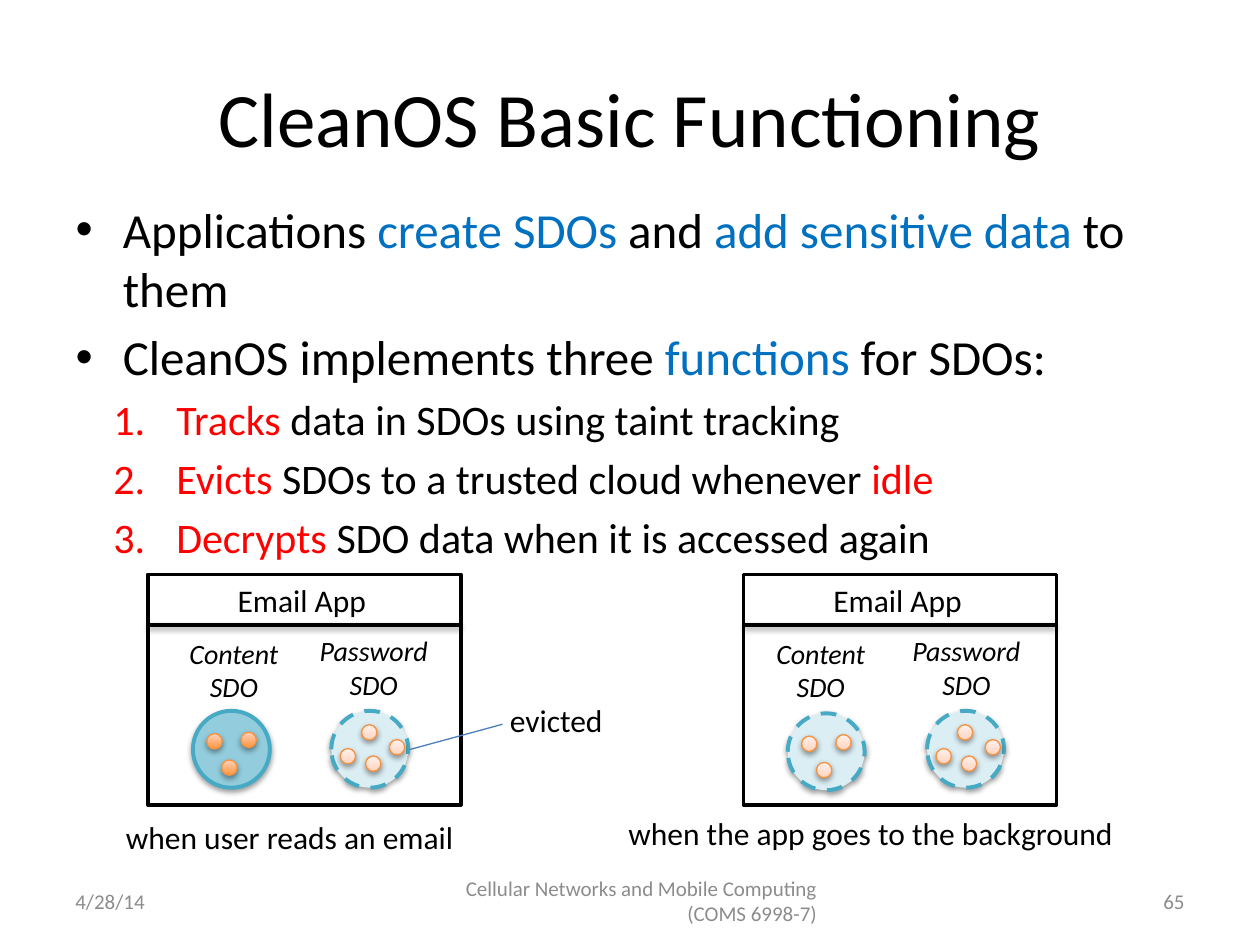
from dataclasses import dataclass

import pptx
import pptx.dml.color
import pptx.enum.dml
import pptx.enum.shapes
import pptx.enum.text
import pptx.oxml
import pptx.oxml.ns
import pptx.util

Cm = pptx.util.Cm
Pt = pptx.util.Pt
Shape = pptx.enum.shapes.MSO_SHAPE
Align = pptx.enum.text.PP_ALIGN
Anchor = pptx.enum.text.MSO_ANCHOR

FONT = "Calibri"
BLACK, BLUE, RED, GREY = "000000", "0070C0", "FF0000", "8C8C8C"
TEAL, ORANGE, LINK = "46AAC5", "F69240", "4B7EBC"
LIVE_FILL, EVICTED_FILL = "93CDDD", "DBEEF4"
LIVE_STOPS = [(0, "FF953E"), (100, "FFD2BD")]
EVICTED_STOPS = [(0, "FFD2BD"), (35, "FFDED0"), (100, "FFF2ED")]

APP_TOP, APP_WIDTH, APP_HEIGHT, HEADER_HEIGHT = 11.58, 6.31, 4.65, 1.02
SDO_SIZE, DATUM_SIZE = 1.55, 0.31
# Places of the data items, measured from the corner of their SDO
CONTENT_DATA = [(0.28, 0.46), (0.97, 0.43), (0.58, 0.99)]
PASSWORD_DATA = [(0.61, 0.28), (0.18, 0.76), (1.17, 0.58), (0.69, 0.91)]


@dataclass
class Sdo:
    left: float
    top: float
    data: list
    evicted: bool
    label: str
    label_left: float
    label_top: float
    label_width: float


@dataclass
class App:
    left: float
    sdos: list
    caption: str
    caption_left: float
    caption_top: float
    caption_width: float


APPS = [
    App(2.98, [
        Sdo(3.89, 14.33, CONTENT_DATA, False, "Content SDO", 3.38, 12.7, 2.67),
        Sdo(6.68, 14.33, PASSWORD_DATA, True, "Password\nSDO", 6.05, 12.65, 2.97),
    ], "when user reads an email", 2.29, 16.36, 7.85),
    App(14.99, [
        Sdo(15.88, 14.38, CONTENT_DATA, True, "Content\nSDO", 15.39, 12.7, 2.31),
        Sdo(18.69, 14.33, PASSWORD_DATA, True, "Password\nSDO", 18.06, 12.65, 2.84),
    ], "when the app goes to the background", 12.42, 16.28, 11.28),
]

BULLETS = [
    [("Applications ", BLACK), ("create SDOs ", BLUE), ("and ", BLACK),
     ("add sensitive data ", BLUE), ("to them", BLACK)],
    [("CleanOS implements three ", BLACK), ("functions", BLUE),
     (" for SDOs:", BLACK)],
]
STEPS = [
    [("Tracks ", RED), ("data in SDOs using taint tracking", BLACK)],
    [("Evicts ", RED), ("SDOs to a trusted cloud whenever ", BLACK), ("idle", RED)],
    [("Decrypts", RED), (" SDO data when it is accessed again", BLACK)],
]


def rgb(value: str) -> pptx.dml.color.RGBColor:
    return pptx.dml.color.RGBColor.from_string(value)


def xml(body: str):
    """Parse one drawing element given without its namespace declaration."""
    tag, rest = body.split(" ", 1)
    return pptx.oxml.parse_xml(f"{tag} {pptx.oxml.ns.nsdecls('a')} {rest}")


def set_font(span, size: float, color: str, italic: bool = False) -> None:
    span.font.name = FONT
    span.font.size = Pt(size)
    span.font.color.rgb = rgb(color)
    if italic:
        span.font.italic = True


def place(shape, left: float, top: float, width: float, height: float) -> None:
    shape.left, shape.top = Cm(left), Cm(top)
    shape.width, shape.height = Cm(width), Cm(height)


def add_text(shapes, text: str, left: float, top: float, width: float,
             height: float = 1.02, size: float = 18, color: str = BLACK,
             align=Align.LEFT, anchor=Anchor.TOP, italic: bool = False,
             wrap: bool = True):
    box = shapes.add_textbox(Cm(left), Cm(top), Cm(width), Cm(height))
    frame = box.text_frame
    frame.word_wrap = wrap
    frame.vertical_anchor = anchor
    frame.text = text
    for para in frame.paragraphs:
        para.alignment = align
        for span in para.runs:
            set_font(span, size, color, italic)
    return box


def set_effects(shape, shadow: bool) -> None:
    """Give the shape a soft drop shadow, or an empty effect list."""
    drop = ('<a:outerShdw blurRad="40000" dist="20000" dir="5400000" '
            'rotWithShape="0"><a:srgbClr val="000000"><a:alpha val="38000"/>'
            '</a:srgbClr></a:outerShdw>') if shadow else ""
    properties = shape._element.spPr
    for old in properties.findall(pptx.oxml.ns.qn("a:effectLst")):
        properties.remove(old)
    properties.append(xml(f"<a:effectLst >{drop}</a:effectLst>"))


def set_gradient(shape, stops: list) -> None:
    shape.fill.background()
    colors = "".join(f'<a:gs pos="{at * 1000}"><a:srgbClr val="{color}"/></a:gs>'
                     for at, color in stops)
    plain = shape._element.spPr.find(pptx.oxml.ns.qn("a:noFill"))
    plain.getparent().replace(plain, xml(
        f'<a:gradFill rotWithShape="1"><a:gsLst>{colors}</a:gsLst>'
        '<a:lin ang="16200000" scaled="0"/></a:gradFill>'))


def add_outlined(shapes, kind, left: float, top: float, width: float,
                 height: float, color: str, weight: float, shadow: bool):
    shape = shapes.add_shape(kind, Cm(left), Cm(top), Cm(width), Cm(height))
    shape.line.color.rgb = rgb(color)
    shape.line.width = Pt(weight)
    set_effects(shape, shadow)
    return shape


def add_line(shapes, start: tuple, end: tuple, color: str, weight: float,
             shadow: bool) -> None:
    line = shapes.add_connector(pptx.enum.shapes.MSO_CONNECTOR.STRAIGHT,
                                *map(Cm, start + end))
    line.line.color.rgb = rgb(color)
    line.line.width = Pt(weight)
    set_effects(line, shadow)


def draw_sdo(shapes, sdo: Sdo) -> None:
    circle = add_outlined(shapes, Shape.OVAL, sdo.left, sdo.top, SDO_SIZE,
                          SDO_SIZE, TEAL, 2.25, True)
    circle.fill.solid()
    circle.fill.fore_color.rgb = rgb(EVICTED_FILL if sdo.evicted else LIVE_FILL)
    if sdo.evicted:
        circle.line.dash_style = pptx.enum.dml.MSO_LINE.DASH
    add_text(shapes, sdo.label, sdo.label_left, sdo.label_top, sdo.label_width,
             1.65, 16, align=Align.CENTER, italic=True, wrap="\n" not in sdo.label)
    for across, down in sdo.data:
        datum = add_outlined(shapes, Shape.OVAL, sdo.left + across, sdo.top + down,
                             DATUM_SIZE, DATUM_SIZE, ORANGE, 0.75, True)
        set_gradient(datum, EVICTED_STOPS if sdo.evicted else LIVE_STOPS)


def draw_app(page, app: App) -> None:
    shapes = page.shapes.add_group_shape().shapes
    for sdo in app.sdos:
        draw_sdo(shapes, sdo)
    frame = add_outlined(shapes, Shape.RECTANGLE, app.left, APP_TOP, APP_WIDTH,
                         APP_HEIGHT, BLACK, 2, False)
    frame.fill.background()
    add_text(shapes, "Email App", app.left + 1.56, APP_TOP, 3.4)
    header = APP_TOP + HEADER_HEIGHT
    add_line(shapes, (app.left, header), (app.left + APP_WIDTH, header),
             BLACK, 2, True)
    add_text(shapes, app.caption, app.caption_left, app.caption_top,
             app.caption_width)


def fill_body(body) -> None:
    place(body, 1.27, 3.89, 23.5, 13.54)
    frame = body.text_frame
    frame.auto_size = pptx.enum.text.MSO_AUTO_SIZE.NONE
    for index, parts in enumerate(BULLETS + STEPS):
        para = frame.paragraphs[0] if index == 0 else frame.add_paragraph()
        numbered = index >= len(BULLETS)
        if numbered:
            para.level = 1
            properties = para._p.get_or_add_pPr()
            properties.set("marL", str(Cm(2.03)))
            properties.set("indent", str(-Cm(1.27)))
            properties.append(xml('<a:buAutoNum type="arabicPeriod"/>'))
        for text, color in parts:
            span = para.add_run()
            span.text = text
            set_font(span, 24 if numbered else 28, color)


def main() -> None:
    deck = pptx.Presentation()
    deck.slide_width, deck.slide_height = Cm(25.4), Cm(19.05)
    page = deck.slides.add_slide(deck.slide_layouts[1])

    title = page.shapes.title
    place(title, 1.27, 0.76, 22.86, 3.18)
    title.text_frame.text = "CleanOS Basic Functioning"
    set_font(title.text_frame.paragraphs[0].runs[0], 44, BLACK)
    fill_body(page.placeholders[1])

    for text, left, width, align in [
        ("4/28/14", 1.27, 5.93, Align.LEFT),
        ("Cellular Networks and Mobile Computing (COMS 6998-7)", 8.68, 8.04,
         Align.RIGHT),
        ("65", 18.2, 5.93, Align.RIGHT),
    ]:
        add_text(page.shapes, text, left, 17.65, width, size=12, color=GREY,
                 align=align, anchor=Anchor.MIDDLE)

    for app in APPS:
        draw_app(page, app)
    add_line(page.shapes, (8.26, 15.11), (10.13, 14.6), LINK, 0.75, False)
    add_text(page.shapes, "evicted", 10.03, 14, 3.02)
    deck.save("out.pptx")


if __name__ == "__main__":
    main()
